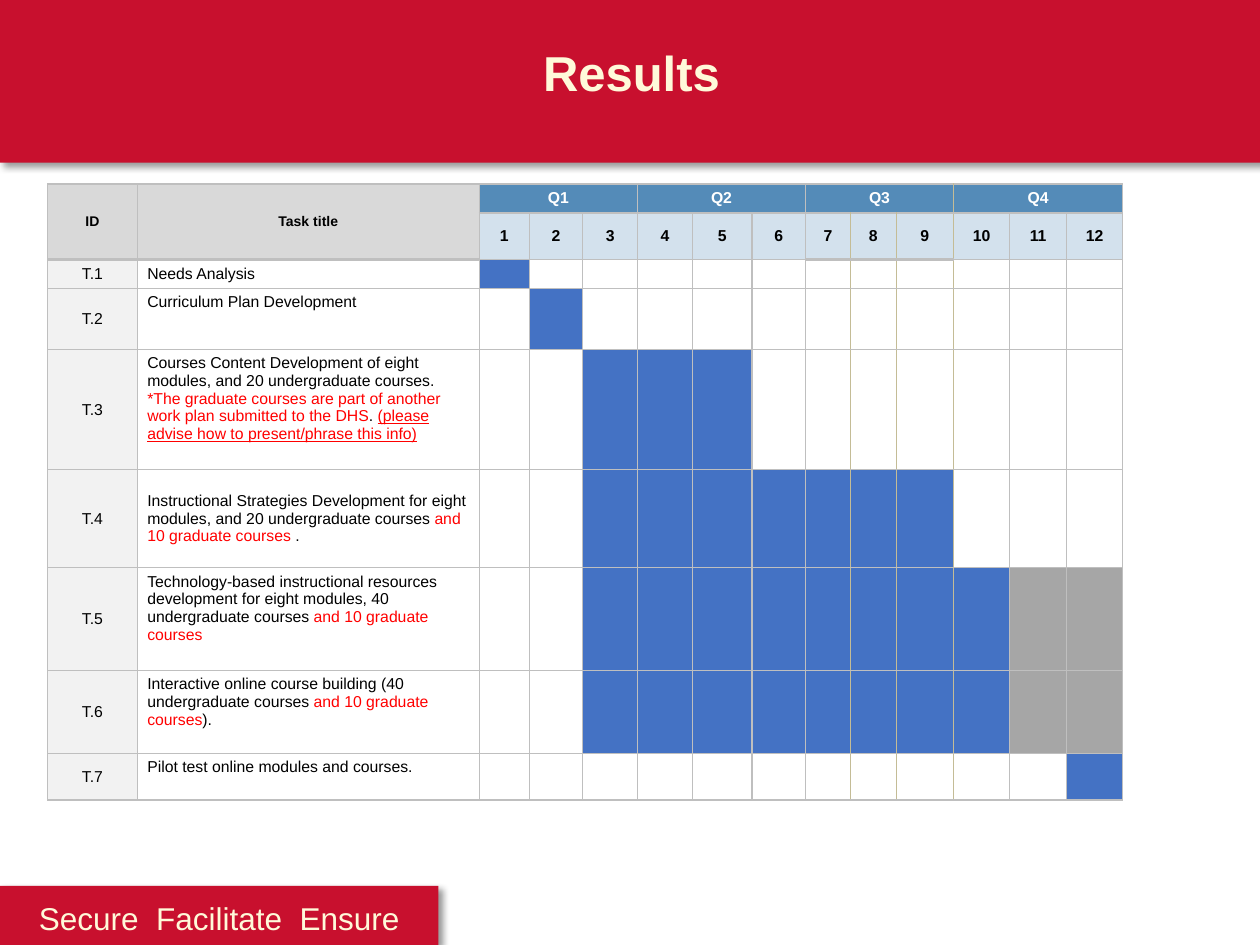
from lxml.etree import SubElement as Sub
from pptx import Presentation
from pptx.dml.color import RGBColor as Rgb
from pptx.enum.shapes import MSO_SHAPE as Kind
from pptx.enum.text import MSO_ANCHOR as Anchor, PP_ALIGN as Align
from pptx.oxml.ns import qn
from pptx.util import Cm, Pt

RED, CREAM, BLACK, WHITE = "C8102E", "FFF9D9", "000000", "FFFFFF"
GREY, TAN, BLUE, ASH, NOTE = "BFBFBF", "C4BC96", "4472C4", "A6A6A6", "FF0000"
COLS = [1.81, 6.89, 1.01, 1.08, 1.1, 1.11, 1.2, 1.08, 0.9, 0.93, 1.15, 1.14, 1.14, 1.14]
ROWS = [0.56, 0.94, 0.57, 1.23, 2.42, 1.98, 2.07, 1.67, 0.94]
GRAD = "and 10 graduate courses"

# Each task: paragraphs of (text, colour) runs, anchor, and bars of (first, last, colour).
TASKS = [
    ([[("Needs Analysis", BLACK)]], Anchor.MIDDLE, [(1, 1, BLUE)]),
    ([[("Curriculum Plan Development", BLACK)]], Anchor.TOP, [(2, 2, BLUE)]),
    ([[("Courses Content Development of eight modules, and 20 undergraduate courses.", BLACK)],
      [("*The graduate courses are part of another work plan submitted to the DHS", NOTE),
       (". ", BLACK),
       ("(please advise how to present/phrase this info)", NOTE, True)]],
     Anchor.TOP, [(3, 5, BLUE)]),
    ([[("Instructional Strategies Development for eight modules, "
        "and 20 undergraduate courses ", BLACK), (GRAD, NOTE), (" .", BLACK)]],
     Anchor.MIDDLE, [(3, 9, BLUE)]),
    ([[("Technology-based instructional resources development for eight modules, "
        "40 undergraduate courses ", BLACK), (GRAD, NOTE)]],
     Anchor.TOP, [(3, 10, BLUE), (11, 12, ASH)]),
    ([[("Interactive online course building (40 undergraduate courses ", BLACK),
       (GRAD, NOTE), (").", BLACK)]],
     Anchor.TOP, [(3, 10, BLUE), (11, 12, ASH)]),
    ([[("Pilot test online modules and courses.", BLACK)]], Anchor.TOP, [(12, 12, BLUE)]),
]


def paint(part, tone):
    """Give a fill or a font one solid colour."""
    if hasattr(part, "solid"):
        part.solid()
        part.fore_color.rgb = Rgb.from_string(tone)
    else:
        part.color.rgb = Rgb.from_string(tone)


def style(run, size, tone, bold=False, line=False):
    """Set the look of a run."""
    font = run.font
    font.name, font.size, font.bold = "Arial", Pt(size), bold
    font.underline = line
    paint(font, tone)


def label(frame, text, size, tone, bold=False):
    """Write one centred line in a text frame."""
    frame.text = text
    par = frame.paragraphs[0]
    par.alignment = Align.CENTER
    style(par.runs[0], size, tone, bold)
    return par


def bar(slide, left, top, width, height):
    """Draw a red band with a soft shadow."""
    box = slide.shapes.add_shape(Kind.RECTANGLE, Cm(left), Cm(top), Cm(width), Cm(height))
    paint(box.fill, RED)
    box.line.fill.background()
    box.shadow.inherit = False
    glow = Sub(box.element.spPr.find(qn("a:effectLst")), qn("a:outerShdw"),
               blurRad=str(Pt(4)), dist=str(Pt(3)), dir="2700000",
               algn="tl", rotWithShape="0")
    Sub(Sub(glow, qn("a:srgbClr"), val=BLACK), qn("a:alpha"), val="40000")


def words(slide, left, top, width, height, text, size, bold=False):
    """Place a line of cream text."""
    box = slide.shapes.add_textbox(Cm(left), Cm(top), Cm(width), Cm(height))
    box.text_frame.word_wrap = True
    return label(box.text_frame, text, size, CREAM, bold)


def header(slide, left, top, width, height):
    """Build the title band."""
    bar(slide, left, top, width, height)
    words(slide, left + 2.57, top + 0.74, 20.32, 1.45, "Results", 28, True)


def footer(slide, left, top, width, height):
    """Build the motto band."""
    bar(slide, left, top, width, height)
    par = words(slide, left, top, width, height, "Secure  Facilitate  Ensure", 18)
    par.line_spacing = 1.19


def edges(cell, row, col):
    """Draw the four borders of a table cell."""
    mid = 8 <= col <= 10
    sides = {
        "L": (TAN if 9 <= col <= 11 else GREY, 0.75),
        "R": (TAN if mid else GREY, 0.75),
        "T": (GREY, 2.25 if row == 2 and (col < 2 or mid) else 0.75),
        "B": (GREY, 2.25 if row < 2 and col < 2 or row == 1 and mid else 0.75),
    }
    props = cell._tc.get_or_add_tcPr()
    for side, (tone, size) in sides.items():
        line = Sub(props, qn(f"a:ln{side}"), w=str(Pt(size)))
        Sub(Sub(line, qn("a:solidFill")), qn("a:srgbClr"), val=tone)


def prep(cell, row, col):
    """Set borders, margins, white fill and a small empty line."""
    edges(cell, row, col)
    paint(cell.fill, WHITE)
    cell.margin_left = cell.margin_right = Cm(0.2)
    cell.margin_top = cell.margin_bottom = Cm(0.1)
    cell.vertical_anchor = Anchor.MIDDLE
    Sub(cell.text_frame.paragraphs[0]._p, qn("a:endParaRPr"), sz="900")


def head(grid):
    """Fill the two heading rows."""
    for col, text in enumerate(["ID", "Task title"]):
        cell = grid.cell(0, col)
        cell.merge(grid.cell(1, col))
        paint(cell.fill, "D9D9D9")
        label(cell.text_frame, text, 8, BLACK, True)
    for term in range(4):
        cell = grid.cell(0, 2 + 3 * term)
        cell.merge(grid.cell(0, 4 + 3 * term))
        paint(cell.fill, "548BB8")
        label(cell.text_frame, f"Q{term + 1}", 9, WHITE, True)
    for month in range(1, 13):
        cell = grid.cell(1, month + 1)
        paint(cell.fill, "D3E1ED")
        label(cell.text_frame, str(month), 9, BLACK, True)


def task(grid, num, pars, anchor, bars):
    """Fill the row of one task."""
    row = num + 1
    cell = grid.cell(row, 0)
    paint(cell.fill, "F2F2F2")
    label(cell.text_frame, f"T.{num}", 9, BLACK)
    cell = grid.cell(row, 1)
    cell.vertical_anchor = anchor
    frame = cell.text_frame
    for pos, parts in enumerate(pars):
        par = frame.add_paragraph() if pos else frame.paragraphs[0]
        for text, *look in parts:
            run = par.add_run()
            run.text = text
            style(run, 9, look[0], line=len(look) > 1)
    for first, last, tone in bars:
        for month in range(first, last + 1):
            paint(grid.cell(row, month + 1).fill, tone)


def plan(slide, left, top):
    """Build the task schedule table."""
    grid = slide.shapes.add_table(len(ROWS), len(COLS), Cm(left), Cm(top),
                                  Cm(sum(COLS)), Cm(sum(ROWS))).table
    grid.first_row = grid.horz_banding = False
    for col, width in zip(grid.columns, COLS):
        col.width = Cm(width)
    for row, height in enumerate(ROWS):
        grid.rows[row].height = Cm(height)
        for col in range(len(COLS)):
            prep(grid.cell(row, col), row, col)
    head(grid)
    for num, item in enumerate(TASKS, 1):
        task(grid, num, *item)


def main():
    """Build and save the slide."""
    deck = Presentation()
    deck.slide_width, deck.slide_height = Cm(25.4), Cm(19.05)
    slide = deck.slides.add_slide(deck.slide_layouts[6])
    header(slide, 0, 0, 25.4, 3.28)
    footer(slide, 0, 17.86, 8.84, 1.19)
    plan(slide, 0.96, 3.71)
    deck.save("out.pptx")


if __name__ == "__main__":
    main()
